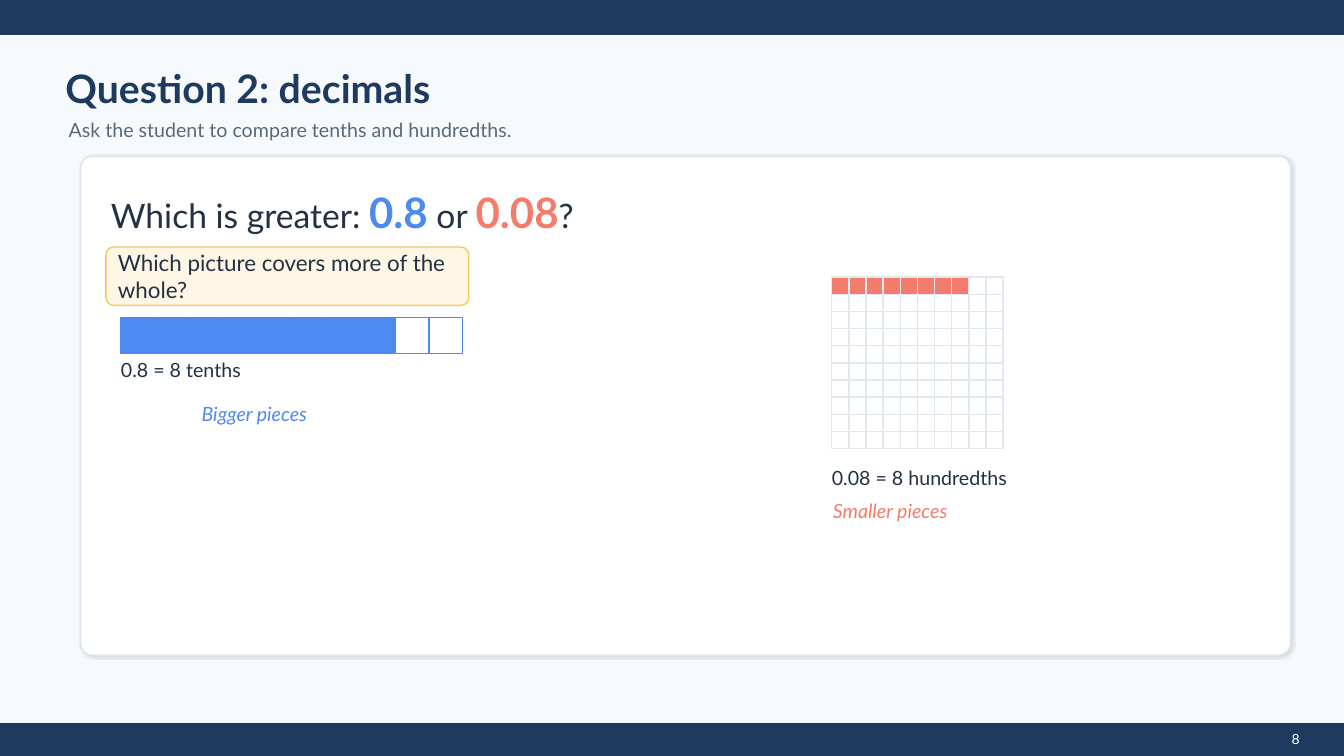
"""Build the slide that compares 0.8 and 0.08 with a tenths bar and a hundredths grid."""
from dataclasses import dataclass
from itertools import product

from lxml.etree import SubElement
from pptx import Presentation
from pptx.dml.color import RGBColor
from pptx.enum.shapes import MSO_SHAPE as Preset
from pptx.enum.text import MSO_ANCHOR as Anchor, PP_ALIGN as Align
from pptx.oxml.ns import qn
from pptx.shapes.autoshape import Shape
from pptx.slide import Slide
from pptx.text.text import Font
from pptx.util import Inches, Pt

FONT = "Lato"
NAVY, INK, GRAY = "1F3A5F", "233142", "5B6975"
BLUE, CORAL, WHITE = "4D8AF0", "F47C6C", "FFFFFF"
PALE, CARD_EDGE, GRID_EDGE = "F7FAFC", "DCE5EE", "E2E8F0"
CREAM, GOLD = "FFF7E5", "F4C95D"


@dataclass(frozen=True)
class Box:
    left: float
    top: float
    width: float
    height: float

    def lengths(self) -> tuple[Inches, Inches, Inches, Inches]:
        return Inches(self.left), Inches(self.top), Inches(self.width), Inches(self.height)


@dataclass(frozen=True)
class Style:
    size: float
    color: str
    bold: bool = False
    italic: bool = False


@dataclass(frozen=True)
class Label:
    box: Box
    text: str
    style: Style


@dataclass(frozen=True)
class CellGrid:
    left: float
    top: float
    rows: int
    columns: int
    cell_width: float
    cell_height: float
    pitch: float
    shaded: int
    color: str
    edge: str


TITLE = Label(Box(0.65, 0.62, 7, 0.5), "Question 2: decimals", Style(28, NAVY, bold=True))
SUBTITLE = Label(Box(0.68, 1.15, 8.2, 0.28),
                 "Ask the student to compare tenths and hundredths.", Style(14, GRAY))
PROMPT = Label(Box(1.17, 2.53, 3.36, 0.42),
               "Which picture covers more of the whole?", Style(16, INK))
TENTHS_LABEL = Label(Box(1.2, 3.55, 3.5, 0.24), "0.8 = 8 tenths", Style(14, INK))
HUNDREDTHS_LABEL = Label(Box(8.25, 4.53, 2.4, 0.42), "0.08 = 8 hundredths", Style(14, INK))
BIGGER = Label(Box(2, 4, 1.2, 0.2), "Bigger pieces", Style(14, BLUE, italic=True))
SMALLER = Label(Box(8.26, 4.97, 1.5, 0.2), "Smaller pieces", Style(14, CORAL, italic=True))

PLAIN = Style(24, INK)
QUESTION_BOX = Box(1.1, 1.9, 5.1, 0.4)
QUESTION = [
    ("Which is greater: ", PLAIN),
    ("0.8", Style(30, BLUE, bold=True)),
    (" or ", PLAIN),
    ("0.08", Style(30, CORAL, bold=True)),
    ("?", PLAIN),
]

TENTHS = CellGrid(1.2, 3.15, 1, 10, 0.33, 0.36, 0.34, 8, BLUE, BLUE)
HUNDREDTHS = CellGrid(8.25, 2.75, 10, 10, 0.17, 0.17, 0.17, 8, CORAL, GRID_EDGE)


def rgb(color: str) -> RGBColor:
    return RGBColor.from_string(color)


def set_font(font: Font, style: Style) -> None:
    font.name = FONT
    font.size = Pt(style.size)
    font.bold = style.bold
    font.italic = style.italic
    font.color.rgb = rgb(style.color)


def add_block(slide: Slide, box: Box, fill: str, edge: str, radius: float = 0) -> Shape:
    preset = Preset.ROUNDED_RECTANGLE if radius else Preset.RECTANGLE
    shape = slide.shapes.add_shape(preset, *box.lengths())
    if radius:
        shape.adjustments[0] = radius
    shape.fill.solid()
    shape.fill.fore_color.rgb = rgb(fill)
    shape.line.color.rgb = rgb(edge)
    shape.line.width = Pt(1)
    shape.shadow.inherit = False
    return shape


def add_soft_shadow(shape: Shape) -> None:
    effects = shape._element.spPr.find(qn("a:effectLst"))
    shadow = SubElement(effects, qn("a:outerShdw"), blurRad=str(Pt(2)), dist=str(Pt(1)),
                        dir=str(45 * 60000), algn="ctr", rotWithShape="0")
    color = SubElement(shadow, qn("a:srgbClr"), val="000000")
    SubElement(color, qn("a:alpha"), val="12000")


def add_text_box(slide: Slide, box: Box) -> Shape:
    text_box = slide.shapes.add_textbox(*box.lengths())
    frame = text_box.text_frame
    frame.word_wrap = True
    frame.vertical_anchor = Anchor.MIDDLE
    frame.margin_left = frame.margin_top = frame.margin_right = frame.margin_bottom = 0
    return text_box


def add_label(slide: Slide, label: Label) -> None:
    paragraph = add_text_box(slide, label.box).text_frame.paragraphs[0]
    paragraph.text = label.text
    set_font(paragraph.font, label.style)


def add_question(slide: Slide) -> None:
    paragraph = add_text_box(slide, QUESTION_BOX).text_frame.paragraphs[0]
    for text, style in QUESTION:
        run = paragraph.add_run()
        run.text = text
        set_font(run.font, style)


def add_cells(slide: Slide, grid: CellGrid) -> None:
    for row, column in product(range(grid.rows), range(grid.columns)):
        box = Box(grid.left + column * grid.pitch, grid.top + row * grid.pitch,
                  grid.cell_width, grid.cell_height)
        is_shaded = row * grid.columns + column < grid.shaded
        add_block(slide, box, grid.color if is_shaded else WHITE, grid.edge)


def add_page_number(slide: Slide, number: int) -> None:
    text_box = slide.shapes.add_textbox(*Box(12.65, 7.2, 0.4, 0.16).lengths())
    text_box.text_frame.word_wrap = True
    paragraph = text_box.text_frame.paragraphs[0]
    paragraph.text = str(number)
    paragraph.alignment = Align.CENTER
    set_font(paragraph.font, Style(10, WHITE))


def main() -> None:
    presentation = Presentation()
    presentation.slide_width = Inches(13.33)
    presentation.slide_height = Inches(7.5)
    slide = presentation.slides.add_slide(presentation.slide_layouts[6])
    slide.background.fill.solid()
    slide.background.fill.fore_color.rgb = rgb(PALE)

    add_block(slide, Box(0, 0, 13.33, 0.34), NAVY, NAVY)
    add_block(slide, Box(0, 7.18, 13.33, 0.32), NAVY, NAVY)
    add_label(slide, TITLE)
    add_label(slide, SUBTITLE)

    card = add_block(slide, Box(0.8, 1.55, 12, 4.95), WHITE, CARD_EDGE, radius=0.024)
    add_soft_shadow(card)
    add_question(slide)
    add_block(slide, Box(1.05, 2.45, 3.6, 0.58), CREAM, GOLD, radius=0.138)
    add_label(slide, PROMPT)

    add_cells(slide, TENTHS)
    add_label(slide, TENTHS_LABEL)
    add_cells(slide, HUNDREDTHS)
    for label in (HUNDREDTHS_LABEL, BIGGER, SMALLER):
        add_label(slide, label)
    add_page_number(slide, 8)

    presentation.save("out.pptx")


if __name__ == "__main__":
    main()
